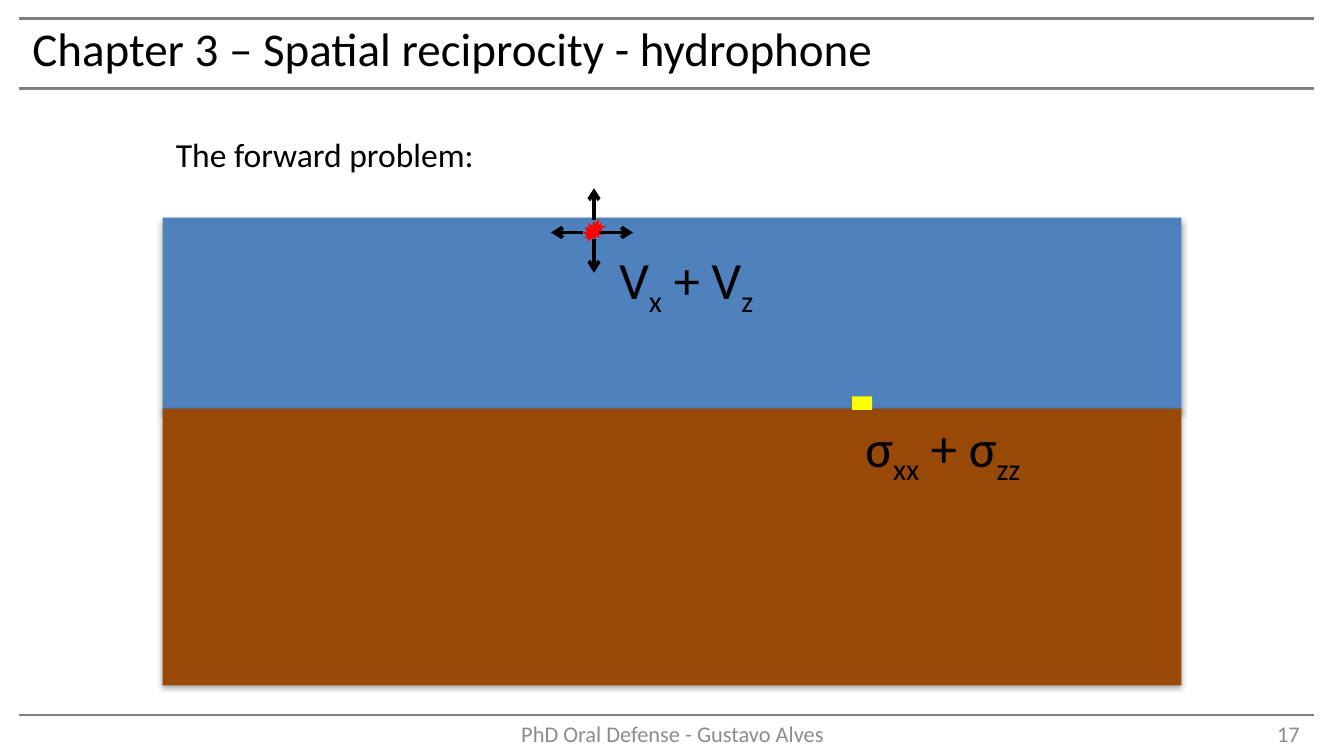
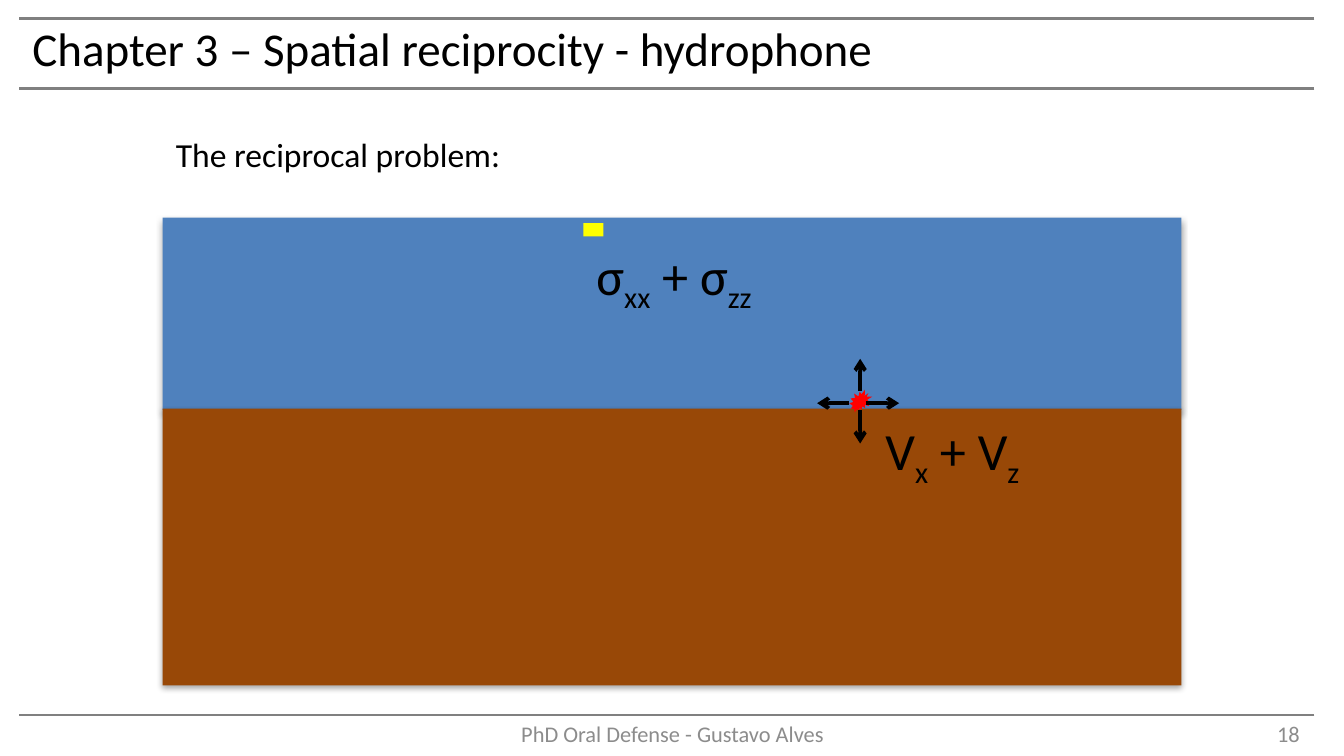
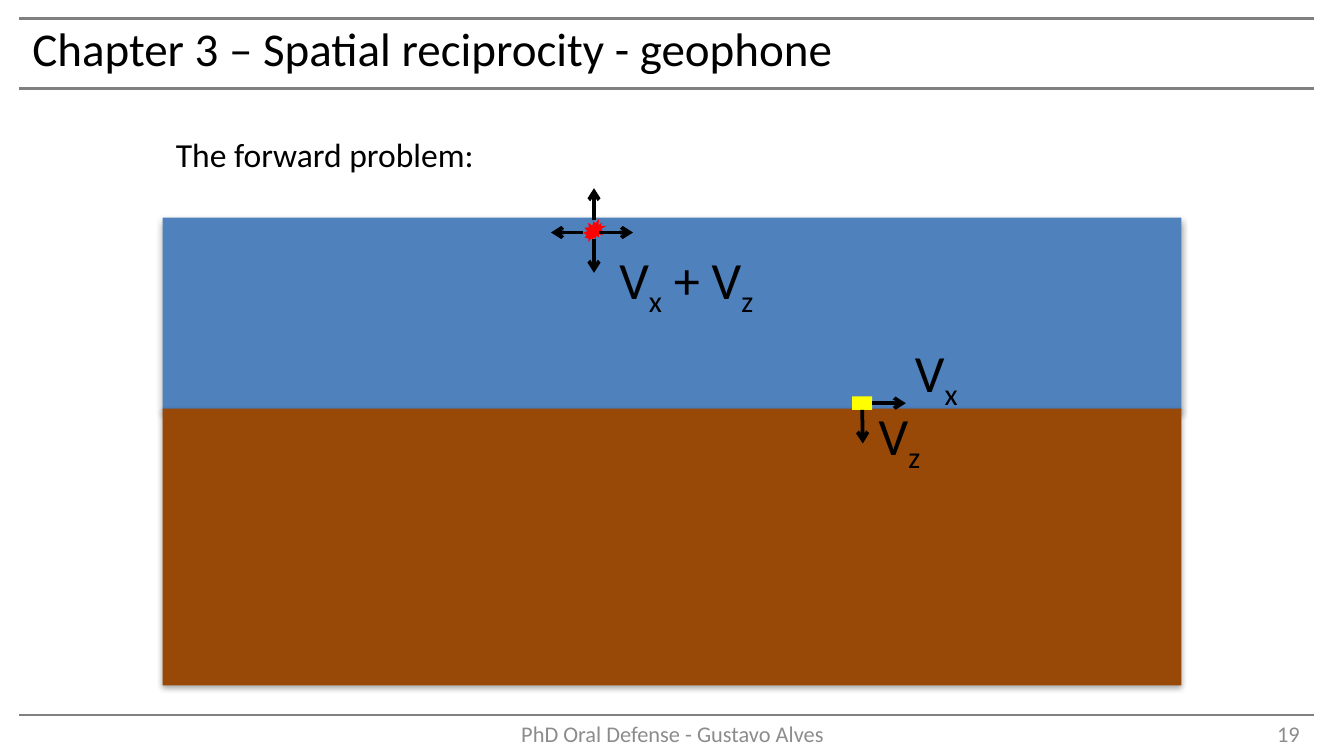
"""Build three slides on spatial reciprocity between sources and receivers."""
from dataclasses import dataclass

import lxml.etree
import pptx
import pptx.dml.color
import pptx.enum.shapes
import pptx.enum.text
import pptx.oxml.ns
import pptx.util

Inches = pptx.util.Inches
RGBColor = pptx.dml.color.RGBColor
SHAPE = pptx.enum.shapes.MSO_SHAPE
ALIGN = pptx.enum.text.PP_ALIGN
ANCHOR = pptx.enum.text.MSO_ANCHOR
FIT = pptx.enum.text.MSO_AUTO_SIZE

BLACK = RGBColor(0x00, 0x00, 0x00)
RULE = RGBColor(0x80, 0x80, 0x80)
FOOT = RGBColor(0x8C, 0x8C, 0x8C)
WATER = RGBColor(0x4F, 0x81, 0xBD)
ROCK = RGBColor(0x98, 0x48, 0x07)
RED = RGBColor(0xFF, 0x00, 0x00)
YELLOW = RGBColor(0xFF, 0xFF, 0x00)

FONT = "Calibri"
FOOTER = "PhD Oral Defense - Gustavo Alves"
FIRST = 17
SPEED = "V|x| + V|z"
STRESS = "σ|xx| + σ|zz"


@dataclass
class Ray:
    """An arrow given by offsets from the centre of a source."""
    start: tuple[float, float]
    end: tuple[float, float]


@dataclass
class Label:
    """A piece of text with its box."""
    text: str
    box: tuple[float, float, float, float]


@dataclass
class Scene:
    """The parts that differ from slide to slide."""
    title: str
    prompt: Label
    source: tuple[float, float]
    sensor: tuple[float, float]
    marks: list[Label]
    motion: bool = False


RAYS = [
    Ray((0, -0.08), (0, -0.32)),
    Ray((0.04, 0.01), (0.29, 0.01)),
    Ray((0, 0.06), (0, 0.31)),
    Ray((-0.08, 0.01), (-0.32, 0.01)),
]

FORWARD = Label("The forward problem:", (1.21, 0.95, 2.46, 0.4))
RECIPROCAL = Label("The reciprocal problem:", (1.21, 0.95, 2.65, 0.4))
HYDRO = "Chapter 3 – Spatial reciprocity - hydrophone"
GEO = "Chapter 3 – Spatial reciprocity - geophone"
SHOT = (4.42, 1.72)
NODE = (6.34, 2.95)

SCENES = [
    Scene(HYDRO, FORWARD, SHOT, NODE, [Label(STRESS, (6.34, 3.04, 1.43, 0.57))]),
    Scene(HYDRO, RECIPROCAL, (6.4, 2.99), (4.34, 1.66),
          [Label(STRESS, (4.34, 1.76, 1.43, 0.57))]),
    Scene(GEO, FORWARD, SHOT, NODE,
          [Label("V|z", (6.44, 2.95, 0.53, 0.57)),
           Label("V|x", (6.71, 2.48, 0.54, 0.57))], motion=True),
]


def write(shape, text: str, size: float = 28, color: RGBColor = BLACK,
          align=ALIGN.LEFT, anchor=ANCHOR.TOP, wrap: bool = False) -> None:
    """Fill a shape with text, lowering every second part split by a bar."""
    frame = shape.text_frame
    frame.auto_size = FIT.NONE if wrap else FIT.SHAPE_TO_FIT_TEXT
    frame.word_wrap = wrap
    frame.vertical_anchor = anchor
    par = frame.paragraphs[0]
    par.alignment = align
    for index, part in enumerate(text.split("|")):
        run = par.add_run()
        run.text = part
        run.font.name = FONT
        run.font.size = pptx.util.Pt(size)
        run.font.color.rgb = color
        if index % 2:
            run.font._element.set("baseline", "-25000")


def add_text(slide, text: str, box: tuple, **style) -> None:
    """Add a text box at the given place."""
    write(slide.shapes.add_textbox(*map(Inches, box)), text, **style)


def add_block(shapes, kind, box: tuple, color: RGBColor):
    """Add a plain filled shape without a line or shadow."""
    block = shapes.add_shape(kind, *map(Inches, box))
    block.shadow.inherit = False
    block.fill.solid()
    block.fill.fore_color.rgb = color
    block.line.fill.background()
    return block


def add_line(slide, start: tuple, end: tuple, color: RGBColor = BLACK,
             width: float = 2, arrow: bool = True):
    """Add a straight line, by default with an arrowhead at its end."""
    line = slide.shapes.add_connector(
        pptx.enum.shapes.MSO_CONNECTOR.STRAIGHT, *map(Inches, (*start, *end)))
    line.line.color.rgb = color
    line.line.width = pptx.util.Pt(width)
    qn = pptx.oxml.ns.qn
    if arrow:
        lxml.etree.SubElement(line.line._get_or_add_ln(), qn("a:tailEnd"), type="arrow")
    lxml.etree.SubElement(line._element.spPr, qn("a:effectLst"))
    return line


def add_shade(block) -> None:
    """Give a block a soft shadow below it."""
    qn = pptx.oxml.ns.qn
    effects = block._element.spPr.find(qn("a:effectLst"))
    shade = lxml.etree.SubElement(effects, qn("a:outerShdw"), blurRad="40000",
                                  dist="23000", dir="5400000", rotWithShape="0")
    color = lxml.etree.SubElement(shade, qn("a:srgbClr"), val=str(BLACK))
    lxml.etree.SubElement(color, qn("a:alpha"), val="35000")


def add_frame(slide, title: str, number: int) -> None:
    """Add the rules, title, footer and slide number."""
    for y in (0.14, 0.66, 5.32):
        add_line(slide, (9.78, y), (0.14, y), RULE, 1.5, arrow=False)
    head = slide.shapes.title
    head.left, head.top, head.width, head.height = map(Inches, (0.14, 0.11, 9, 0.49))
    write(head, title, size=25.2, anchor=ANCHOR.MIDDLE, wrap=True)
    foot = dict(size=12, color=FOOT, anchor=ANCHOR.MIDDLE, wrap=True)
    add_text(slide, FOOTER, (3.42, 5.31, 3.17, 0.3), align=ALIGN.CENTER, **foot)
    add_text(slide, str(number), (7.44, 5.31, 2.33, 0.3), align=ALIGN.RIGHT, **foot)


def add_earth(slide) -> None:
    """Add the water layer above the rock layer as one group."""
    group = slide.shapes.add_group_shape()
    for top, height, color in ((1.62, 1.43, WATER), (3.04, 2.06, ROCK)):
        add_shade(add_block(group.shapes, SHAPE.RECTANGLE, (1.21, top, 7.58, height), color))


def add_source(slide, x: float, y: float) -> None:
    """Add a burst with four arrows and its label."""
    add_block(slide.shapes, SHAPE.EXPLOSION2, (x - 0.08, y - 0.09, 0.17, 0.17), RED)
    for ray in RAYS:
        add_line(slide, (x + ray.start[0], y + ray.start[1]),
                 (x + ray.end[0], y + ray.end[1]))
    add_text(slide, SPEED, (x + 0.09, y + 0.07, 1.24, 0.57))


def add_sensor(slide, x: float, y: float, motion: bool) -> None:
    """Add a receiver, with arrows right and down if it senses motion."""
    box = add_block(slide.shapes, SHAPE.RECTANGLE, (x, y, 0.15, 0.1), YELLOW)
    if motion:
        for site, end in ((3, (x + 0.4, y + 0.05)), (2, (x + 0.08, y + 0.35))):
            add_line(slide, (x, y), end).begin_connect(box, site)


def main() -> None:
    """Build and save the deck."""
    deck = pptx.Presentation()
    deck.slide_width = Inches(10)
    deck.slide_height = deck.slide_width * 9 // 16
    for number, scene in enumerate(SCENES, FIRST):
        slide = deck.slides.add_slide(deck.slide_layouts[5])
        add_frame(slide, scene.title, number)
        add_earth(slide)
        add_sensor(slide, *scene.sensor, scene.motion)
        add_source(slide, *scene.source)
        for mark in scene.marks:
            add_text(slide, mark.text, mark.box)
        add_text(slide, scene.prompt.text, scene.prompt.box, size=18)
    deck.save("out.pptx")


if __name__ == "__main__":
    main()
